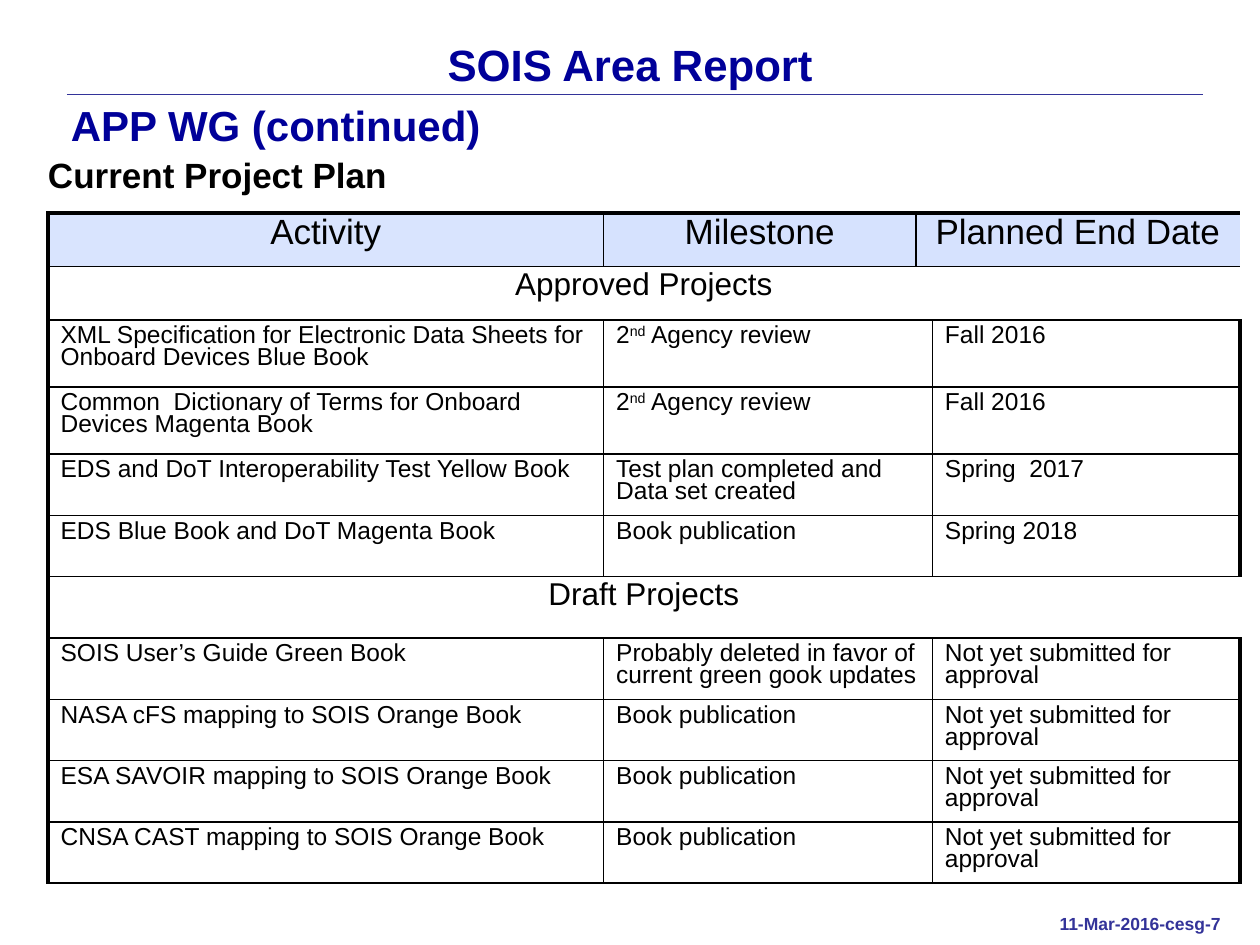
from lxml import etree
from pptx import Presentation
from pptx.dml.color import RGBColor
from pptx.enum import shapes, text
from pptx.oxml import ns
from pptx.util import Pt

FONT = "Arial"
HEX = {"navy": "000099", "indigo": "333399", "black": "000000", "head": "618FFD"}
TITLE = "SOIS Area Report"
GROUP = "APP WG (continued)"
PLAN = "Current Project Plan"
FOOT = "11-Mar-2016-cesg-7"

REVIEW = (("2", 0), ("nd", 30), (" Agency review", 0))
BOOK = "Book publication"
LATER = "Not yet submitted for approval"
ROWS = [
    ("Activity", "Milestone", "Planned End Date"),
    ("Approved Projects",),
    ("XML Specification for Electronic Data Sheets for Onboard Devices Blue Book",
     REVIEW, "Fall 2016"),
    ("Common  Dictionary of Terms for Onboard Devices Magenta Book", REVIEW, "Fall 2016"),
    ("EDS and DoT Interoperability Test Yellow Book",
     "Test plan completed and Data set created", "Spring  2017"),
    ("EDS Blue Book and DoT Magenta Book", BOOK, "Spring 2018"),
    ("Draft Projects",),
    ("SOIS User’s Guide Green Book",
     "Probably deleted in favor of current green gook updates", LATER),
    ("NASA cFS mapping to SOIS Orange Book", BOOK, LATER),
    ("ESA SAVOIR mapping to SOIS Orange Book", BOOK, LATER),
    ("CNSA CAST mapping to SOIS Orange Book", BOOK, LATER),
]
WIDTHS = [317.5, 178.5, 9.4, 175.7]
HEIGHTS = [30.6] * 2 + [38.3] * 2 + [35.05] * 7
# First and last grid column of each cell, by kind of row
SPANS = {"head": [(0, 0), (1, 1), (2, 3)], "band": [(0, 3)],
         "item": [(0, 0), (1, 2), (3, 3)]}
SIZES = {"head": 20, "band": 18, "item": 14}
NO_STYLE = "{2D5ABB26-0587-4C30-8999-92F81FD0307C}"
THICK, THIN = 2.25, 1
LEFT, MID = text.PP_ALIGN.LEFT, text.PP_ALIGN.CENTER


def add_run(para, words, size, color, bold=False, raised=0):
    run = para.add_run()
    run.text = words
    font = run.font
    font.name, font.size, font.bold = FONT, Pt(size), bold
    font.color.rgb = RGBColor.from_string(HEX[color])
    if raised:
        run._r.get_or_add_rPr().set("baseline", str(raised * 1000))


def place(shape, left, top, width, height):
    shape.left, shape.top = Pt(left), Pt(top)
    shape.width, shape.height = Pt(width), Pt(height)


def set_frame(shape, words, size, color, align=LEFT, lead=1.0, wrap=True):
    """Fill a text shape with one bold line and return its paragraph."""
    frame = shape.text_frame
    frame.word_wrap = wrap
    frame.auto_size = text.MSO_AUTO_SIZE.NONE
    frame.vertical_anchor = text.MSO_ANCHOR.TOP
    para = frame.paragraphs[0]
    para.alignment, para.line_spacing, para.space_before = align, lead, Pt(0)
    add_run(para, words, size, color, True)
    return para


def add_box(slide, at, inset, *args, **style):
    box = slide.shapes.add_textbox(*map(Pt, at))
    frame = box.text_frame
    frame.margin_left = frame.margin_right = Pt(inset[0])
    frame.margin_top = frame.margin_bottom = Pt(inset[1])
    set_frame(box, *args, **style)


def add_edge(cell, side, width):
    edge = etree.SubElement(cell._tc.get_or_add_tcPr(), ns.qn("a:ln" + side),
                            w=str(Pt(width)))
    fill = etree.SubElement(edge, ns.qn("a:solidFill"))
    etree.SubElement(fill, ns.qn("a:srgbClr"), val=HEX["black"])


def tint(cell, alpha):
    cell.fill.solid()
    cell.fill.fore_color.rgb = RGBColor.from_string(HEX["head"])
    color = cell._tc.tcPr.find(".//" + ns.qn("a:solidFill") + "[last()]/"
                               + ns.qn("a:srgbClr") + "[@val='%s']" % HEX["head"])
    etree.SubElement(color, ns.qn("a:alpha"), val=str(alpha * 1000))


def frame_span(table, row, first, last):
    """Draw the outer edges of a span and set the fill of its cells."""
    for col in range(first, last + 1):
        cell = table.cell(row, col)
        if col == first:
            add_edge(cell, "L", THIN if col else THICK)
        if col == last:
            add_edge(cell, "R", THICK if col == len(WIDTHS) - 1 else THIN)
        add_edge(cell, "T", THIN if row else THICK)
        add_edge(cell, "B", THIN)
        if row == 0:
            tint(cell, 26 if col else 24)
        else:
            cell.fill.background()


def add_plan(slide):
    table = slide.shapes.add_table(
        len(ROWS), len(WIDTHS), Pt(27.4), Pt(121.7),
        Pt(sum(WIDTHS)), Pt(sum(HEIGHTS))).table
    table.first_row = table.horz_banding = False
    table._tbl.tblPr.find(ns.qn("a:tableStyleId")).text = NO_STYLE
    for col, width in zip(table.columns, WIDTHS):
        col.width = Pt(width)
    for row, (cells, height) in enumerate(zip(ROWS, HEIGHTS)):
        table.rows[row].height = Pt(height)
        kind = "head" if row == 0 else "band" if len(cells) == 1 else "item"
        for words, (first, last) in zip(cells, SPANS[kind]):
            cell = table.cell(row, first)
            if last > first:
                cell.merge(table.cell(row, last))
            frame_span(table, row, first, last)
            para = cell.text_frame.paragraphs[0]
            para.alignment = LEFT if kind == "item" else MID
            para.line_spacing = 0.8
            runs = [(words, 0)] if isinstance(words, str) else words
            for part, raised in runs:
                add_run(para, part, SIZES[kind], "black", raised=raised)


def main():
    deck = Presentation()
    deck.slide_width, deck.slide_height = Pt(720), Pt(540)
    slide = deck.slides.add_slide(deck.slide_layouts[1])

    rule = slide.shapes.add_connector(shapes.MSO_CONNECTOR.STRAIGHT,
                                      Pt(38.2), Pt(54), Pt(687.6), Pt(54))
    rule.line.color.rgb = RGBColor.from_string(HEX["indigo"])
    rule.line.width = Pt(0.13)
    etree.SubElement(rule._element.spPr, ns.qn("a:effectLst"))

    title, body = slide.placeholders
    place(title, 36, 21.6, 648, 90)
    set_frame(title, TITLE, 25, "navy", MID, 0.9)
    add_box(slide, (36, 52.6, 450.7, 36.7), (4.5, 4.5), GROUP, 24, "navy")

    place(body, 20.2, 88.6, 648, 30.2)
    para = set_frame(body, PLAN, 20, "black", lead=0.8)
    para.level = 1
    props = para._p.get_or_add_pPr()
    props.set("marL", "0")
    props.set("indent", "0")
    etree.SubElement(props, ns.qn("a:buNone"))

    add_plan(slide)
    add_box(slide, (599, 518.4, 113, 18.7), (6.5, 3.2), FOOT, 10, "indigo", wrap=False)
    deck.save("out.pptx")


if __name__ == "__main__":
    main()
